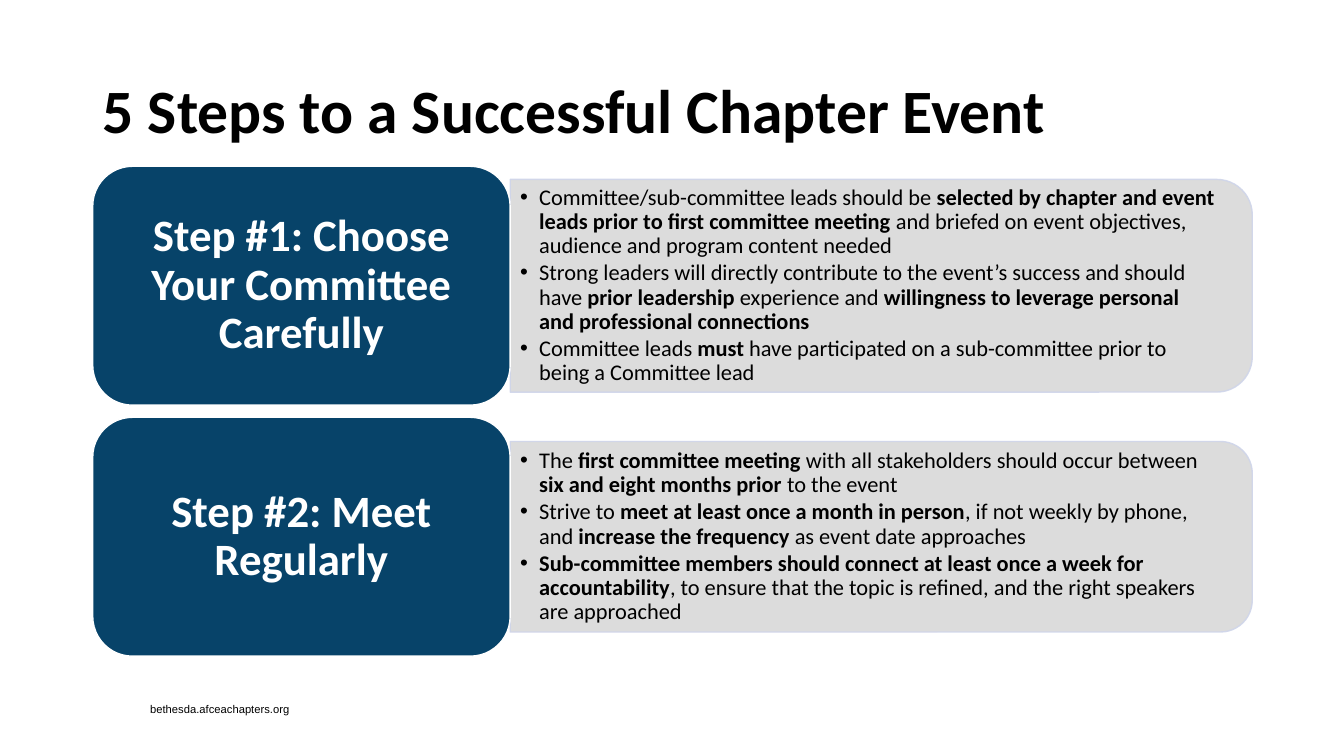
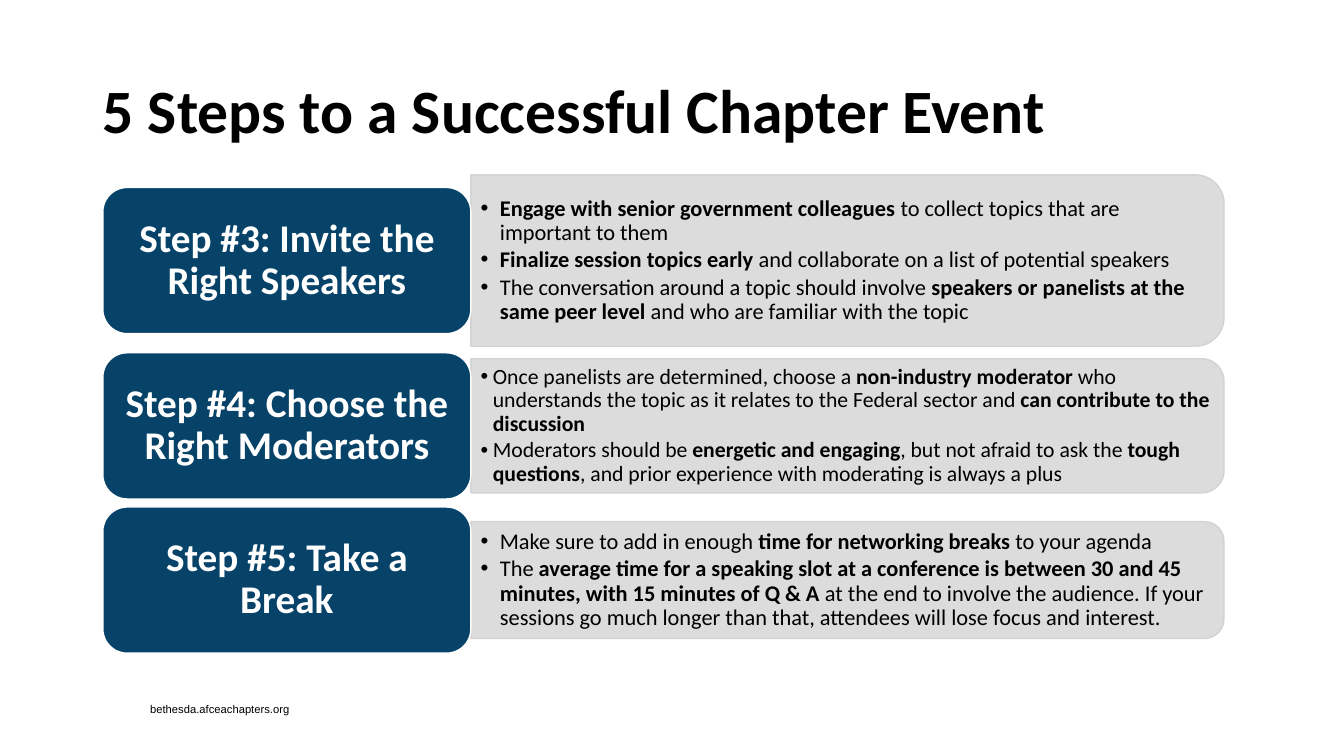
from dataclasses import dataclass

from lxml.etree import SubElement
from pptx import Presentation
from pptx.dml.color import RGBColor
from pptx.enum.shapes import MSO_SHAPE
from pptx.enum.text import MSO_ANCHOR, PP_ALIGN
from pptx.oxml.ns import qn
from pptx.util import Inches, Pt


@dataclass(frozen=True)
class Theme:
    black: RGBColor = RGBColor.from_string("000000")
    white: RGBColor = RGBColor.from_string("FFFFFF")
    navy: RGBColor = RGBColor.from_string("074369")
    grey: RGBColor = RGBColor.from_string("D9D9D9")
    opacity: int = 90
    heading_font: str = "Calibri"
    footer_font: str = "Arial"
    title_size: float = 44
    footer_size: float = 8
    body_size: float = 16
    tight_size: float = 15.5
    line_spacing: float = 0.9
    bullet_gap: float = 2.4


theme = Theme()
TITLE = "5 Steps to a Successful Chapter Event"
FOOTER = "bethesda.afceachapters.org"

# Each step: label top, panel height, text size, bullet indent, label, bullets.
# Double asterisks enclose bold words.
pages = [
    {
        "label_left": 0.92, "label_width": 4.14, "label_height": 2.37,
        "label_size": 32, "label_inset": 0.24,
        "panel_width": 7.36, "text_width": 7.26, "right_inset": 0.27,
        "outline": RGBColor.from_string("CFD5EA"),
        "steps": [
            (1.65, 2.11, theme.body_size, 0.19, "Step #1: Choose Your Committee Carefully", [
                "Committee/sub-committee leads should be **selected by chapter and event leads "
                "prior to first committee meeting **and briefed on event objectives, audience "
                "and program content needed",
                "Strong leaders will directly contribute to the event’s success and should have "
                "**prior leadership **experience and **willingness to leverage personal and "
                "professional connections**",
                "Committee leads **must **have participated on a sub-committee prior to being "
                "a Committee lead",
            ]),
            (4.14, 1.89, theme.body_size, 0.19, "Step #2: Meet Regularly", [
                "The **first committee meeting **with all stakeholders should occur between "
                "**six and eight months prior **to the event",
                "Strive to **meet at least once a month in person**, if not weekly by phone, "
                "and **increase the frequency **as event date approaches",
                "**Sub-committee members should connect at least once a week for "
                "accountability**, to ensure that the topic is refined, and the right "
                "speakers are approached",
            ]),
        ],
    },
    {
        "label_left": 1.02, "label_width": 3.65, "label_height": 1.45,
        "label_size": 28, "label_inset": 0.19,
        "panel_width": 7.47, "text_width": 7.4, "right_inset": 0.06,
        "outline": RGBColor.from_string("CFD1D4"),
        "steps": [
            (1.86, 1.7, theme.body_size, 0.19, "Step #3: Invite the Right Speakers", [
                "**Engage with senior government colleagues **to collect topics that are "
                "important to them",
                "**Finalize session topics early **and collaborate on a list of potential "
                "speakers",
                "The conversation around a topic should involve **speakers or panelists at "
                "the same peer level **and who are familiar with the topic",
            ]),
            (3.5, 1.33, theme.tight_size, 0.12, "Step #4: Choose the Right Moderators", [
                "Once panelists are determined, choose a **non-industry moderator **who "
                "understands the topic as it relates to the Federal sector and **can "
                "contribute to the discussion**",
                "Moderators should be **energetic and engaging**, but not afraid to ask the "
                "**tough questions**, and prior experience with moderating is always a plus",
            ]),
            (5.03, 1.16, theme.body_size, 0.19, "Step #5: Take a Break", [
                "Make sure to add in enough **time for networking breaks **to your agenda",
                "The **average time for a speaking slot at a conference is between 30 and 45 "
                "minutes, with 15 minutes of Q & A **at the end to involve the audience. If "
                "your sessions go much longer than that, attendees will lose focus and "
                "interest.",
            ]),
        ],
    },
]


def set_frame(frame, left, top, right, bottom, anchor=MSO_ANCHOR.MIDDLE):
    """Set wrapping, anchoring and margins in inches."""
    settings = {
        "word_wrap": True, "vertical_anchor": anchor,
        "margin_left": Inches(left), "margin_top": Inches(top),
        "margin_right": Inches(right), "margin_bottom": Inches(bottom),
    }
    for name, value in settings.items():
        setattr(frame, name, value)


def write(para, text, size, color, bold=False, font=theme.heading_font):
    """Write text as spans, switching weight at each double asterisk."""
    for index, part in enumerate(text.split("**")):
        if part:
            span = para.add_run()
            span.text = part
            span.font.color.rgb = color
            settings = {"name": font, "size": Pt(size), "bold": bold or index % 2 == 1}
            for name, value in settings.items():
                setattr(span.font, name, value)


deck = Presentation()
deck.slide_width, deck.slide_height = Inches(13.33), Inches(7.5)

for content in pages:
    page = deck.slides.add_slide(deck.slide_layouts[5])

    # Footer
    footer = page.shapes.add_textbox(Inches(1.39), Inches(6.92), Inches(1.65), Inches(0.24))
    set_frame(footer.text_frame, 0.1, 0.05, 0.1, 0.05, MSO_ANCHOR.TOP)
    write(footer.text_frame.paragraphs[0], FOOTER, theme.footer_size, theme.black,
          font=theme.footer_font)

    # Title
    title = page.shapes.title
    position = {"left": 0.92, "top": 0.4, "width": 11.5, "height": 1.45}
    for name, value in position.items():
        setattr(title, name, Inches(value))
    set_frame(title.text_frame, 0.1, 0.05, 0.1, 0.05)
    para = title.text_frame.paragraphs[0]
    para.alignment = PP_ALIGN.LEFT
    para.line_spacing = theme.line_spacing
    write(para, TITLE, theme.title_size, theme.black, bold=True)

    panel_left = content["label_left"] + content["label_width"]
    for label_top, panel_height, size, indent, heading, bullets in content["steps"]:
        middle = label_top + content["label_height"] / 2

        # Panel: a shape with two round corners, turned so that they face right
        center = panel_left + content["panel_width"] / 2
        panel = page.shapes.add_shape(
            MSO_SHAPE.ROUND_2_SAME_RECTANGLE,
            Inches(center - panel_height / 2), Inches(middle - content["panel_width"] / 2),
            Inches(panel_height), Inches(content["panel_width"]))
        panel.rotation = 90
        panel.shadow.inherit = False
        panel.fill.solid()
        panel.fill.fore_color.rgb = theme.grey
        panel.line.color.rgb = content["outline"]
        panel.line.width = Pt(1)
        for color in panel._element.spPr.iter(qn("a:srgbClr")):
            SubElement(color, qn("a:alpha"), val=str(theme.opacity * 1000))

        # Bullets
        box = page.shapes.add_textbox(
            Inches(panel_left), Inches(middle - panel_height / 2),
            Inches(content["text_width"]), Inches(panel_height))
        set_frame(box.text_frame, 0.1, 0.03, content["right_inset"], 0.03)
        for index, bullet in enumerate(bullets):
            para = box.text_frame.add_paragraph() if index else box.text_frame.paragraphs[0]
            properties = para._p.get_or_add_pPr()
            properties.set("marL", str(Inches(indent)))
            properties.set("indent", str(-Inches(indent)))
            SubElement(properties, qn("a:buFont"), typeface=theme.footer_font)
            SubElement(properties, qn("a:buChar"), char="•")
            para.line_spacing = theme.line_spacing
            para.space_after = Pt(theme.bullet_gap)
            write(para, bullet, size, theme.black)

        # Step label
        label = page.shapes.add_shape(
            MSO_SHAPE.ROUNDED_RECTANGLE,
            Inches(content["label_left"]), Inches(label_top),
            Inches(content["label_width"]), Inches(content["label_height"]))
        label.shadow.inherit = False
        label.fill.solid()
        label.fill.fore_color.rgb = theme.navy
        label.line.color.rgb = theme.white
        label.line.width = Pt(1)
        # The shape's own text area is already inset by its round corners
        corner = content["label_height"] * 0.1667 * 0.29
        side = content["label_inset"] - corner
        set_frame(label.text_frame, side, 0.07, side, 0.07)
        para = label.text_frame.paragraphs[0]
        para.alignment = PP_ALIGN.CENTER
        para.line_spacing = theme.line_spacing
        write(para, heading, content["label_size"], theme.white, bold=True)

deck.save("out.pptx")
